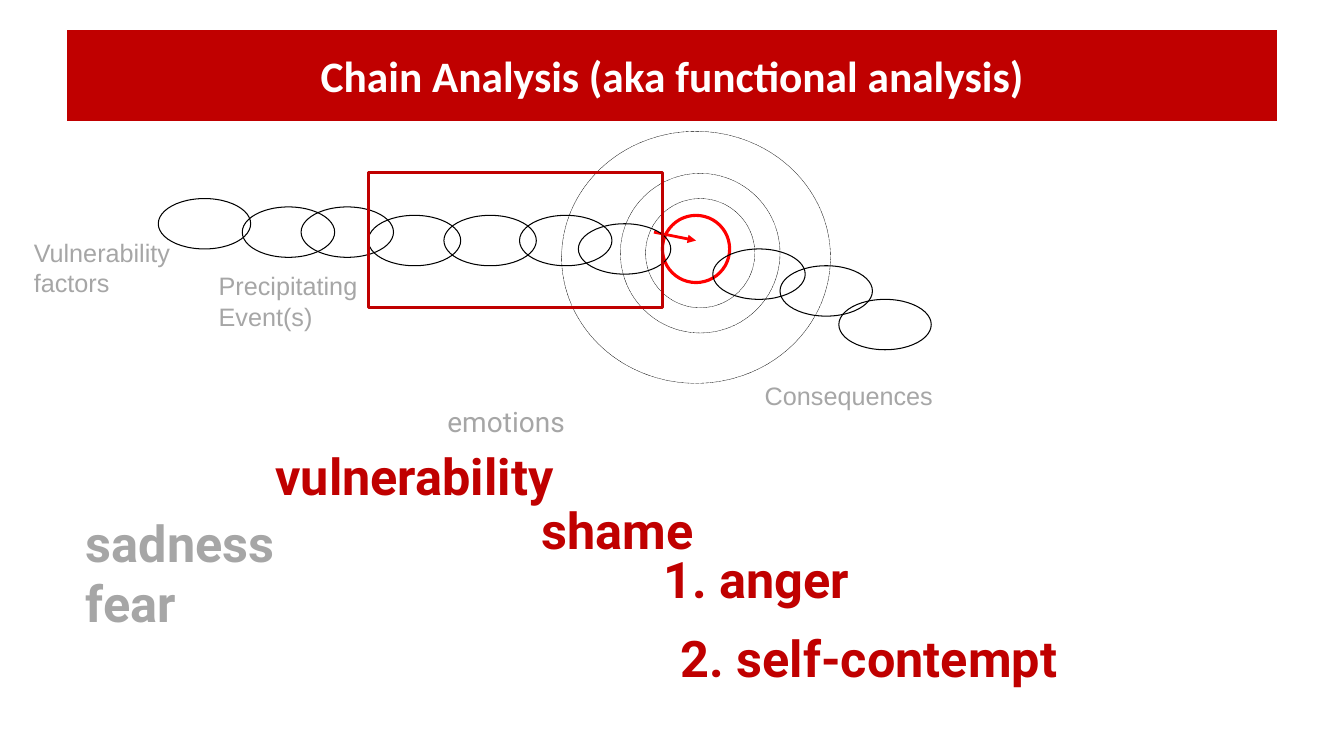
from lxml import etree
from pptx import Presentation
from pptx import util as u
from pptx.dml.color import RGBColor
from pptx.enum import dml, shapes, text
from pptx.oxml.ns import qn

WIDTH, HEIGHT = u.Inches(13.33), u.Inches(7.5)
CELL = 1 / 12  # inches
LEFT, TOP = 1.57, 1.97  # grid origin: corner of the first link
COLORS = {"crimson": "C00000", "red": "FF0000", "gray": "A6A6A6",
          "black": "000000", "white": "FFFFFF"}

LINK_SIZE = (11, 6)
LINKS = [(0, 0), (10, 1), (17, 1), (25, 2), (34, 2), (43, 2), (50, 3),
         (81, 12), (74, 8), (66, 6)]
RIPPLES = [(48, -8, 32, 30), (55, -3, 19, 19), (58, 0, 13, 13)]
TARGET = (60, 2, 8, 8)
FOCUS_BOX = (25, -3.1, 35, 16.1)
STAGES = [
    ("Vulnerability factors", (-16, 4, 20, 8.4)),
    ("Precipitating Event(s)", (6, 8, 20, 8.4)),
    ("Consequences", (71, 21, 25, 4.8)),
]
EMOTIONS = [
    ("shame", (38.2, 35.2, 32.9, 8.5)),
    ("1. anger", (53.6, 41, 35.2, 8.5)),
    ("vulnerability", (6.1, 28.8, 48.8, 8.5)),
    ("2. self-contempt", (53.6, 50.4, 62, 8.5)),
]


def rgb(name):
    return RGBColor.from_string(COLORS[name])


def point(col, row):
    return u.Inches(LEFT + col * CELL), u.Inches(TOP + row * CELL)


def area(col, row, cols, rows):
    return *point(col, row), u.Inches(cols * CELL), u.Inches(rows * CELL)


def format_text(tf, font, size, color, bold, align):
    for p in tf.paragraphs:
        p.alignment = align
        for r in p.runs:
            r.font.name, r.font.size, r.font.bold = font, u.Pt(size), bold
            r.font.color.rgb = rgb(color)


def add_title(s, words):
    sp = s.shapes.title
    sp.left, sp.top = int(WIDTH * 0.05), int(HEIGHT * 0.04)
    sp.width, sp.height = int(WIDTH * 0.9), int(HEIGHT * 0.12)
    sp.fill.solid()
    sp.fill.fore_color.rgb = rgb("crimson")
    tf = sp.text_frame
    tf.text = words
    tf.auto_size = text.MSO_AUTO_SIZE.NONE
    tf.vertical_anchor = text.MSO_ANCHOR.MIDDLE
    format_text(tf, "Calibri", 31, "white", True, text.PP_ALIGN.CENTER)


def add_outline(s, kind, cells, color, weight, dash=None):
    sp = s.shapes.add_shape(kind, *area(*cells))
    sp.shadow.inherit = False
    sp.fill.background()
    sp.line.color.rgb = rgb(color)
    sp.line.width = u.Pt(weight)
    if dash:
        sp.line.dash_style = dash


def add_arrow(s, start, end, color, weight):
    line = s.shapes.add_connector(shapes.MSO_CONNECTOR.STRAIGHT,
                                  *point(*start), *point(*end))
    line.line.color.rgb = rgb(color)
    line.line.width = u.Pt(weight)
    etree.SubElement(line.line._get_or_add_ln(), qn("a:tailEnd"), type="triangle")
    etree.SubElement(line._element.spPr, qn("a:effectLst"))


def add_label(s, words, cells, font, size, color, bold=False,
              align=text.PP_ALIGN.LEFT):
    tf = s.shapes.add_textbox(*area(*cells)).text_frame
    tf.word_wrap = True
    tf.auto_size = text.MSO_AUTO_SIZE.SHAPE_TO_FIT_TEXT
    tf.text = words
    format_text(tf, font, size, color, bold, align)


def main():
    prs = Presentation()
    prs.slide_width, prs.slide_height = WIDTH, HEIGHT
    s = prs.slides.add_slide(prs.slide_layouts[5])
    oval, center = shapes.MSO_SHAPE.OVAL, text.PP_ALIGN.CENTER

    add_title(s, "Chain Analysis (aka functional analysis)")
    for cells in RIPPLES:
        add_outline(s, oval, cells, "black", 0.25, dml.MSO_LINE.ROUND_DOT)
    add_outline(s, oval, TARGET, "red", 2.25)
    add_arrow(s, (59, 4), (64, 5), "red", 2)
    for corner in LINKS:
        add_outline(s, oval, corner + LINK_SIZE, "black", 0.75)
    for words, cells in STAGES:
        add_label(s, words, cells, "Arial", 18, "gray")

    add_label(s, "emotions", (25.9, 23.9, 31, 5.3), "Roboto", 20, "gray",
              align=center)
    for words, cells in EMOTIONS:
        add_label(s, words, cells, "Roboto", 36, "crimson", True, center)
    add_label(s, "sadness\nfear", (-9.8, 36.7, 32.2, 15.7), "Roboto", 36,
              "gray", True)
    add_outline(s, shapes.MSO_SHAPE.RECTANGLE, FOCUS_BOX, "crimson", 2)
    prs.save("out.pptx")


if __name__ == "__main__":
    main()
